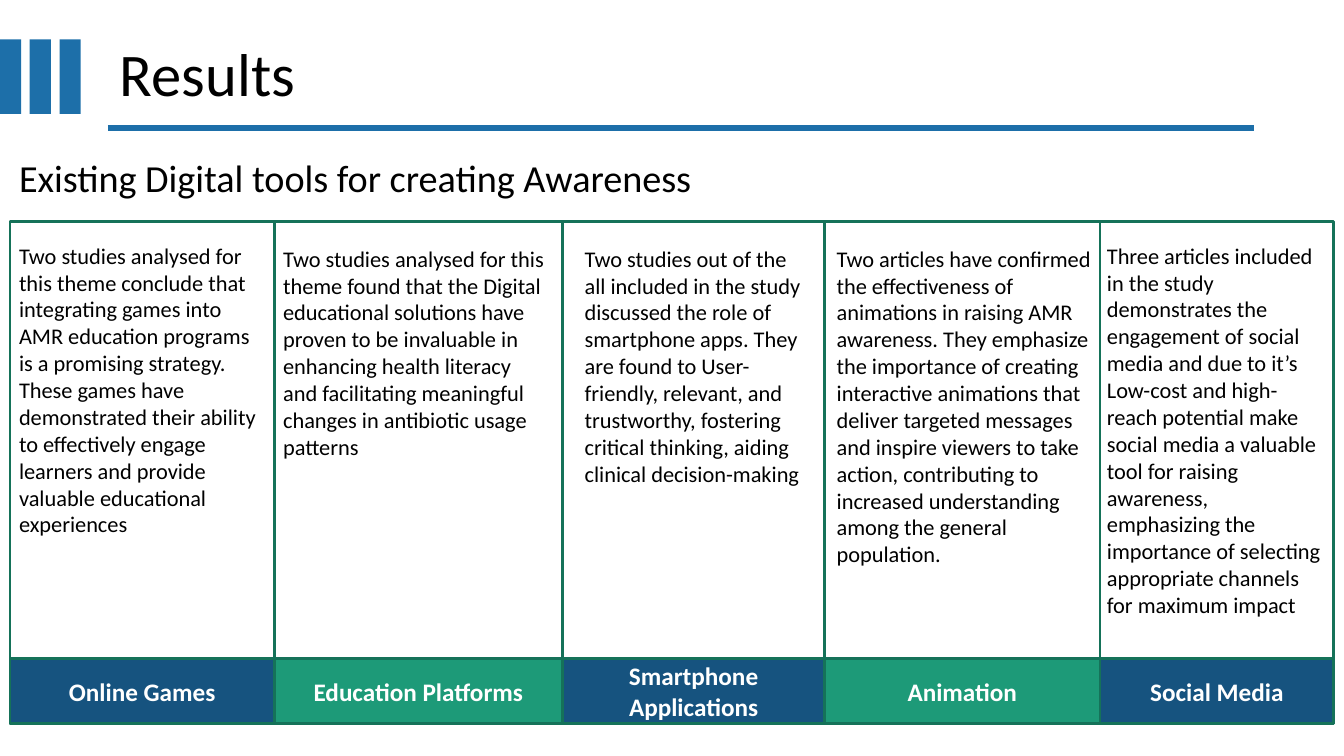
from itertools import pairwise
from lxml.etree import SubElement
from pptx import Presentation
from pptx.dml.color import RGBColor
from pptx.enum.shapes import MSO_CONNECTOR as Link, MSO_SHAPE as Form
from pptx.enum.text import MSO_ANCHOR as Anchor, MSO_AUTO_SIZE as Fit, PP_ALIGN as Align
from pptx.oxml.ns import qn
from pptx.util import Inches, Pt

BLUE = RGBColor(0x1D, 0x6F, 0xA9)
NAVY = RGBColor(0x16, 0x53, 0x7F)
GREEN = RGBColor(0x1D, 0x9A, 0x78)
EDGE = RGBColor(0x15, 0x72, 0x59)
BLACK = RGBColor(0, 0, 0)
WHITE = RGBColor(255, 255, 255)

WIDTH, HEIGHT = 13.33, 7.5
EDGES = [0.1, 2.72, 5.58, 8.18, 10.91, 13.23]
TOP, SPLIT, BASE = 2.2, 6.53, 7.18

THEMES = [
    ("Online Games", 0.09, 2.35, 2.62,
     "Two studies analysed for this theme conclude that integrating games into AMR "
     "education programs is a promising strategy. These games have demonstrated their "
     "ability to effectively engage learners and provide valuable educational experiences"),
    ("Education Platforms", 2.71, 2.38, 2.84,
     "Two studies analysed for this theme found that the Digital educational solutions "
     "have proven to be invaluable in enhancing health literacy and facilitating "
     "meaningful changes in antibiotic usage patterns"),
    ("Smartphone Applications", 5.7, 2.38, 2.45,
     "Two studies out of the all included in the study discussed the role of smartphone "
     "apps. They are found to User-friendly, relevant, and trustworthy, fostering "
     "critical thinking, aiding clinical decision-making"),
    ("Animation", 8.2, 2.38, 2.74,
     "Two articles have confirmed the effectiveness of animations in raising AMR "
     "awareness. They emphasize the importance of creating interactive animations that "
     "deliver targeted messages and inspire viewers to take action, contributing to "
     "increased understanding among the general population."),
    ("Social Media", 10.88, 2.35, 2.32,
     "Three articles included in the study demonstrates the engagement of social media "
     "and due to it’s Low-cost and high-reach potential make social media a valuable "
     "tool for raising awareness, emphasizing the importance of selecting appropriate "
     "channels for maximum impact"),
]


def place(x, y, w, h):
    return [Inches(v) for v in (x, y, w, h)]


def write(shape, text, size=16, color=BLACK, bold=False, align=Align.LEFT,
          anchor=Anchor.TOP, space=1.0):
    frame = shape.text_frame
    frame.text = text
    frame.word_wrap = True
    frame.auto_size = Fit.NONE
    frame.vertical_anchor = anchor
    para = frame.paragraphs[0]
    para.alignment = align
    para.line_spacing = space
    font = para.runs[0].font
    font.name = "Calibri"
    font.size = Pt(size)
    font.bold = bold
    font.color.rgb = color


def label(slide, text, x, y, w, h, **style):
    write(slide.shapes.add_textbox(*place(x, y, w, h)), text, **style)


def block(slide, x, y, w, h, fill=None, edge=None):
    box = slide.shapes.add_shape(Form.RECTANGLE, *place(x, y, w, h))
    box.shadow.inherit = False
    if fill is None:
        box.fill.background()
    else:
        box.fill.solid()
        box.fill.fore_color.rgb = fill
    if edge is None:
        box.line.fill.background()
    else:
        box.line.color.rgb = edge
        box.line.width = Pt(2)
    return box


def rule(slide, left, right, y):
    line = slide.shapes.add_connector(
        Link.STRAIGHT, Inches(left), Inches(y), Inches(right), Inches(y))
    line.line.color.rgb = BLUE
    line.line.width = Pt(4.5)
    SubElement(line._element.spPr, qn("a:effectLst"))


def header(slide):
    title = slide.shapes.title
    title.left, title.top, title.width, title.height = place(1.09, 0.35, 2.8, 0.82)
    write(title, "Results", size=43.2, anchor=Anchor.MIDDLE, space=0.9)
    rule(slide, 1.07, 12.44, 1.27)
    for i in range(3):
        block(slide, i * 0.295, 0.39, 0.21, 0.74, fill=BLUE)
    label(slide, "Existing Digital tools for creating Awareness", 0.09, 1.38, 8.08, 0.82,
          size=27.3, anchor=Anchor.MIDDLE, space=0.9)


def column(slide, left, right, fill, theme):
    name, x, y, w, text = theme
    block(slide, left, TOP, right - left, BASE - TOP, edge=EDGE)
    foot = block(slide, left, SPLIT, right - left, BASE - SPLIT, fill=fill, edge=EDGE)
    write(foot, name, size=18, color=WHITE, bold=True, align=Align.CENTER,
          anchor=Anchor.MIDDLE)
    label(slide, text, x, y, w, SPLIT - y)


def main():
    deck = Presentation()
    deck.slide_width, deck.slide_height = Inches(WIDTH), Inches(HEIGHT)
    slide = deck.slides.add_slide(deck.slide_layouts[5])
    header(slide)
    for i, ((left, right), theme) in enumerate(zip(pairwise(EDGES), THEMES)):
        column(slide, left, right, (NAVY, GREEN)[i % 2], theme)
    deck.save("out.pptx")


if __name__ == "__main__":
    main()
